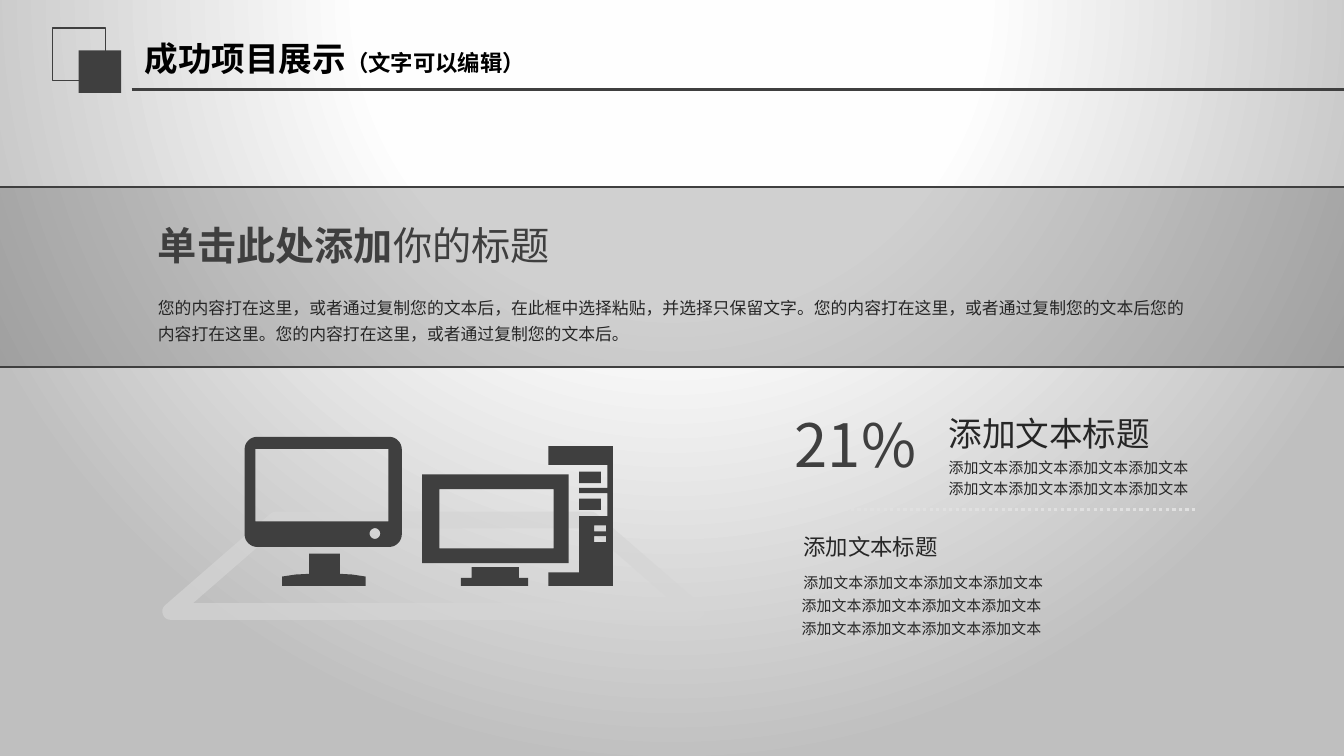
"""Build the project showcase slide: heading, shaded band, computers and captions."""
from dataclasses import dataclass
from math import cos, pi, sin

from lxml.etree import SubElement
from pptx import Presentation
from pptx.dml.color import RGBColor
from pptx.enum.dml import MSO_LINE
from pptx.enum.shapes import MSO_CONNECTOR, MSO_SHAPE
from pptx.enum.text import MSO_ANCHOR, PP_ALIGN
from pptx.oxml.ns import qn
from pptx.util import Inches, Pt


@dataclass(frozen=True)
class Theme:
    dark: str = "3F3F3F"
    ink: str = "262626"
    black: str = "000000"
    floor: str = "D5D5D5"
    dots: str = "E0E0E0"
    backdrop: tuple = ((0, "FFFFFF"), (40, "FEFEFE"), (100, "BFBFBF"))
    latin: str = "Calibri"
    cjk: str = "Noto Sans CJK SC"
    figure: int = 32
    headline: int = 21
    title: int = 18
    subtitle: int = 12
    body: int = 9
    small: int = 8


THEME = Theme()
WIDTH, COLUMNS = Inches(10), 100
HEIGHT = WIDTH * 9 // 16
CELL = WIDTH // COLUMNS
FINE = 100

WIDE, TIGHT = (1, 0.5), (0.75, 0.4)
TITLE_AREA = (9.75, 2.15, 35.6, 4.3)
TITLE = [("成功项目展示", THEME.title, True), ("（文字可以编辑）", THEME.subtitle, True)]
HEADLINE = [("单击此处添加", THEME.headline, True), ("你的标题", THEME.headline, False)]
SENTENCE = "您的内容打在这里，或者通过复制您的文本后"
STORY = (f"{SENTENCE}，在此框中选择粘贴，并选择只保留文字。"
         f"{SENTENCE}您的内容打在这里。{SENTENCE}。")
CAPTION = "添加文本标题"
DETAIL = [("添加文本" * 4, THEME.small, False)]

TEXTS = [
    ((11, 16.1, 32, 4.3), TIGHT, THEME.dark, 1, [HEADLINE]),
    ((11, 21.3, 78.5, 4.5), TIGHT, THEME.ink, 1.3, [[(STORY, THEME.body, False)]]),
    ((69.6, 30.2, 27, 4), WIDE, THEME.ink, 1, [[(CAPTION, THEME.title, False)]]),
    ((69.6, 33.35, 25, 4.2), WIDE, THEME.ink, 1.2, [DETAIL, DETAIL]),
    ((58.15, 29.85, 11.4, 6.4), WIDE, THEME.dark, 1, [[("21%", THEME.figure, False)]]),
    ((58.8, 39.15, 14.1, 3), WIDE, THEME.ink, 1, [[(CAPTION, THEME.subtitle, False)]]),
    ((58.8, 41.95, 23.7, 2.6), WIDE, THEME.ink, 1.2, [DETAIL]),
    ((58.9, 43.7, 23.7, 2.4), TIGHT, THEME.ink, 1.2, [DETAIL]),
    ((58.9, 45.4, 23.7, 2.4), TIGHT, THEME.ink, 1.2, [DETAIL]),
]


def grid(*cells):
    return [round(cell * CELL) for cell in cells]


def rectangle(left, top, right, bottom):
    return [(left, top), (right, top), (right, bottom), (left, bottom)]


def rounded(left, top, right, bottom, radius, steps=8):
    centres = rectangle(left + radius, top + radius, right - radius, bottom - radius)
    return [(x + radius * cos(angle), y + radius * sin(angle))
            for corner, (x, y) in enumerate(centres)
            for angle in (pi + pi / 2 * (corner + step / steps) for step in range(steps + 1))]


DESKTOP = [
    rectangle(31.4, 35.3, 42.3, 41.9),
    rectangle(32.7, 36.4, 41.2, 40.8),
    [(34.3, 43), (35.1, 43), (35.1, 42.2), (38.6, 42.2), (38.6, 43), (39.3, 43),
     (39.3, 43.6), (34.3, 43.6)],
    [(40.8, 43.6), (45.6, 43.6), (45.6, 33.2), (40.8, 33.2), (40.8, 34.6), (45.2, 34.6),
     (45.2, 36.3), (43.1, 36.3), (43.1, 36.7), (45.2, 36.7), (45.2, 38.4), (43.1, 38.4),
     (43.1, 42.6), (40.8, 42.6)],
    *[rectangle(43.1, top, 44.7, top + 0.85) for top in (35.1, 37.1)],
    *[rectangle(44.2, top, 45.1, top + 0.45) for top in (39.1, 39.9)],
]
MONITOR = [
    rounded(18.2, 32.5, 29.9, 40.7, 0.95),
    rectangle(19, 33.4, 28.9, 38.8),
    rounded(27.5, 39.3, 28.3, 40.1, 0.4),
    [(21, 42.9), (22, 42.75), (23, 42.7), (23, 41.2), (25.3, 41.2), (25.3, 42.7),
     (26.2, 42.75), (27.2, 42.9), (27.2, 43.6), (21, 43.6)],
]


def set_alpha(parent, percent):
    color = parent.find(".//" + qn("a:srgbClr"))
    SubElement(color, qn("a:alpha"), val=str(percent * 1000))


def style_line(line, color, weight):
    line.color.rgb = RGBColor.from_string(color)
    line.width = Pt(weight)


def style_shape(shape, fill=None, line=None):
    shape.shadow.inherit = False
    if fill:
        shape.fill.solid()
        shape.fill.fore_color.rgb = RGBColor.from_string(fill)
    else:
        shape.fill.background()
    if line:
        style_line(shape.line, *line)
    else:
        shape.line.fill.background()
    return shape


def add_preset(slide, preset, area, **style):
    return style_shape(slide.shapes.add_shape(preset, *grid(*area)), **style)


def add_icon(slide, contours):
    fine = [[(x * FINE, y * FINE) for x, y in contour] for contour in contours]
    builder = slide.shapes.build_freeform(*fine[0][0], scale=CELL / FINE)
    for index, (start, *rest) in enumerate(fine):
        if index:
            builder.move_to(*start)
        builder.add_line_segments(rest, close=True)
    return style_shape(builder.convert_to_shape(), fill=THEME.dark)


def add_rule(slide, left, right, top, color, weight):
    rule = slide.shapes.add_connector(MSO_CONNECTOR.STRAIGHT, *grid(left, top, right, top))
    style_line(rule.line, color, weight)
    SubElement(rule._element.spPr, qn("a:effectLst"))
    return rule


def write(frame, lines, color, latin, spacing=1, inset=WIDE, anchor=MSO_ANCHOR.TOP):
    side, edge = grid(*inset)
    layout = {"word_wrap": True, "vertical_anchor": anchor, "margin_left": side,
              "margin_right": side, "margin_top": edge, "margin_bottom": edge}
    for name, value in layout.items():
        setattr(frame, name, value)
    for index, line in enumerate(lines):
        paragraph = frame.add_paragraph() if index else frame.paragraphs[0]
        paragraph.alignment, paragraph.line_spacing = PP_ALIGN.LEFT, spacing
        for words, size, bold in line:
            run = paragraph.add_run()
            run.text = words
            run.font.color.rgb = RGBColor.from_string(color)
            for name, value in {"size": Pt(size), "bold": bold, "name": latin}.items():
                setattr(run.font, name, value)
            SubElement(run._r.rPr, qn("a:ea"), typeface=THEME.cjk)


def paint_background(slide):
    fill = slide.background.fill
    fill.gradient()
    gradient = slide._element.cSld.find(".//" + qn("a:gradFill"))
    for child in list(gradient):
        gradient.remove(child)
    stops = SubElement(gradient, qn("a:gsLst"))
    for share, color in THEME.backdrop:
        stop = SubElement(stops, qn("a:gs"), pos=str(share * 1000))
        SubElement(stop, qn("a:srgbClr"), val=color)
    path = SubElement(gradient, qn("a:path"), path="circle")
    SubElement(path, qn("a:fillToRect"), l="50000", t="-80000", r="50000", b="180000")


def main():
    deck = Presentation()
    deck.slide_width, deck.slide_height = WIDTH, HEIGHT
    slide = deck.slides.add_slide(deck.slide_layouts[5])
    paint_background(slide)

    title = slide.shapes.title
    title.left, title.top, title.width, title.height = grid(*TITLE_AREA)
    write(title.text_frame, [TITLE], THEME.black, THEME.latin, anchor=MSO_ANCHOR.MIDDLE)

    add_preset(slide, MSO_SHAPE.RECTANGLE, (3.92, 2.1, 3.92, 3.92), line=(THEME.dark, 0.75))
    add_preset(slide, MSO_SHAPE.RECTANGLE, (5.86, 3.75, 3.16, 3.16), fill=THEME.dark)
    add_rule(slide, 9.8, 101.2, 6.67, THEME.dark, 1.25)

    band = add_preset(slide, MSO_SHAPE.RECTANGLE, (-0.4, 13.9, 101.2, 13.4),
                      fill=THEME.dark, line=(THEME.dark, 1))
    set_alpha(band._element.spPr.find(qn("a:solidFill")), 24)

    floor = add_preset(slide, MSO_SHAPE.FLOWCHART_MANUAL_OPERATION, (12.7, 38.7, 39.1, 6.8),
                       line=(THEME.floor, 9))
    floor._element.spPr.xfrm.set("flipV", "1")
    outline = floor._element.spPr.find(qn("a:ln"))
    set_alpha(outline, 70)
    SubElement(outline, qn("a:round"))
    for icon in (DESKTOP, MONITOR):
        add_icon(slide, icon)

    add_rule(slide, 59.4, 89, 37.9, THEME.dots, 1.75).line.dash_style = MSO_LINE.ROUND_DOT
    for area, inset, color, spacing, lines in TEXTS:
        frame = slide.shapes.add_textbox(*grid(*area)).text_frame
        write(frame, lines, color, THEME.cjk, spacing, inset)
    deck.save("out.pptx")


if __name__ == "__main__":
    main()
